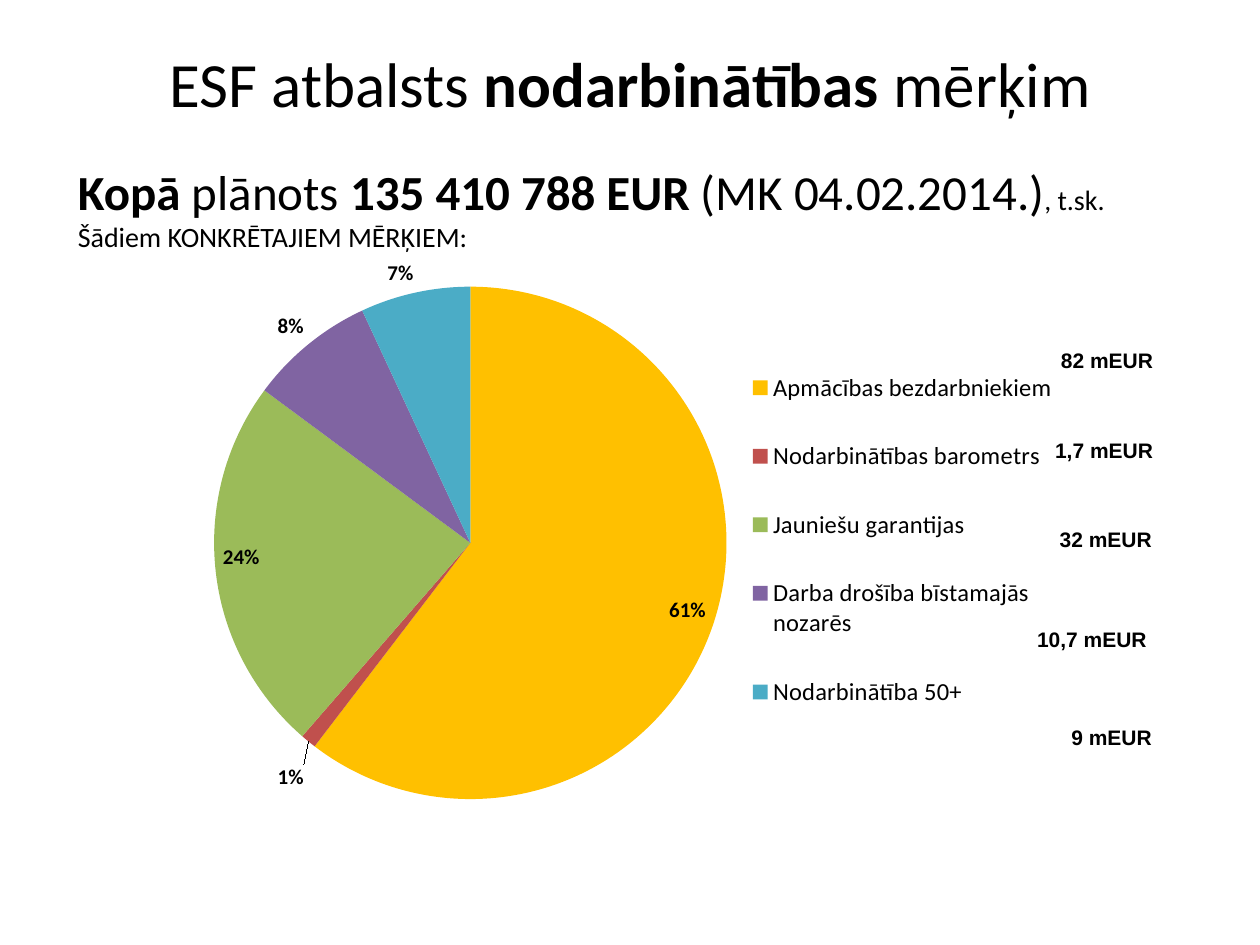
from lxml.etree import SubElement
from pptx import Presentation
from pptx.chart.data import CategoryChartData
from pptx.dml.color import RGBColor
from pptx.enum.chart import XL_CHART_TYPE, XL_LABEL_POSITION, XL_LEGEND_POSITION
from pptx.enum.text import MSO_ANCHOR, PP_ALIGN
from pptx.oxml.ns import qn
from pptx.util import Inches, Pt

LABEL_FORMAT = '0"%"'

# Category, share in percent, slice colour, label outside the pie
GOALS = [
    ("Apmācības bezdarbniekiem", 61, "FFC000", False),
    ("Nodarbinātības barometrs", 1, "C0504D", True),
    ("Jauniešu garantijas", 24, "9BBB59", False),
    ("Darba drošība bīstamajās nozarēs", 8, "8064A2", True),
    ("Nodarbinātība 50+", 7, "4BACC6", True),
]

# Amount, left, top
AMOUNTS = [
    ("82 mEUR", 7.68, 2.71),
    ("1,7 mEUR", 7.68, 3.42),
    ("32 mEUR", 7.67, 4.13),
    ("10,7 mEUR", 7.63, 4.92),
    ("9 mEUR", 7.67, 5.7),
]


def rgb(color):
    return RGBColor.from_string(color)


def manual_layout(x, y, w=None, h=None, inner=False, edge=True):
    """Return (tag, value) pairs of a manual chart layout."""
    items = [("layoutTarget", "inner")] if inner else []
    if edge:
        items += [("xMode", "edge"), ("yMode", "edge")]
    items += [("x", x), ("y", y)]
    if w is not None:
        items += [("w", w), ("h", h)]
    return items


def set_layout(parent, index, items):
    for old in parent.findall(qn("c:layout")):
        parent.remove(old)
    layout = SubElement(parent, qn("c:layout"))
    manual = SubElement(layout, qn("c:manualLayout"))
    for tag, value in items:
        SubElement(manual, qn(f"c:{tag}")).set("val", str(value))
    parent.insert(index, layout)


class SlideBuilder:
    text_color = "000000"
    body_font = "Calibri"
    amount_font = "Arial"

    def __init__(self, slide):
        self.slide = slide

    def style(self, font, size, bold=False, name=None):
        font.name = name or self.body_font
        font.size = Pt(size)
        font.bold = bold
        font.color.rgb = rgb(self.text_color)

    def text(self, x, y, w, h, runs, align=PP_ALIGN.LEFT, name=None):
        """Add a text box; runs are (text, size, bold)."""
        sp = self.slide.shapes.add_textbox(Inches(x), Inches(y), Inches(w), Inches(h))
        tf = sp.text_frame
        tf.word_wrap = True
        tf.vertical_anchor = MSO_ANCHOR.TOP
        p = tf.paragraphs[0]
        p.alignment = align
        for text, size, bold in runs:
            r = p.add_run()
            r.text = text
            self.style(r.font, size, bold, name)

    def pie(self, x, y, w, h, goals):
        data = CategoryChartData()
        data.categories = [goal[0] for goal in goals]
        data.add_series("Series 1", [goal[1] for goal in goals])
        chart = self.slide.shapes.add_chart(
            XL_CHART_TYPE.PIE, Inches(x), Inches(y), Inches(w), Inches(h), data
        ).chart
        chart.has_title = False
        self.style(chart.font, 10)
        plot = chart.plots[0]
        plot.vary_by_categories = True
        set_layout(chart._chartSpace.chart.plotArea, 0,
                   manual_layout(0.02, 0.09, 0.59, 0.86, inner=True))

        # Legend
        chart.has_legend = True
        legend = chart.legend
        legend.position = XL_LEGEND_POSITION.RIGHT
        legend.include_in_layout = False
        self.style(legend.font, 14)
        set_layout(legend._element, 1, manual_layout(0.63, 0.17, 0.36, 0.69))

        # Slices and their labels
        series = plot.series[0]
        labels = series.data_labels
        labels.show_value = True
        labels.number_format = LABEL_FORMAT
        labels.number_format_is_linked = False
        labels.position = XL_LABEL_POSITION.INSIDE_END
        self.style(labels.font, 12, True)
        for i, (_, share, color, outside) in enumerate(goals):
            point = series.points[i]
            point.format.fill.solid()
            point.format.fill.fore_color.rgb = rgb(color)
            if outside:
                label = point.data_label
                self.style(label.font, 12, True)
                label.position = XL_LABEL_POSITION.OUTSIDE_END
                self.finish_label(labels._element, i, share)

    def finish_label(self, labels, i, share):
        """Format one label, and move that of the thinnest slice away."""
        for label in labels.findall(qn("c:dLbl")):
            if label.find(qn("c:idx")).get("val") == str(i):
                number = SubElement(label, qn("c:numFmt"))
                number.set("formatCode", LABEL_FORMAT)
                number.set("sourceLinked", "0")
                label.insert(1, number)
                if share == 1:
                    set_layout(label, 1, manual_layout(0, 0.03, edge=False))


def main():
    prs = Presentation()
    prs.slide_width, prs.slide_height = Inches(10), Inches(7.5)
    s = SlideBuilder(prs.slides.add_slide(prs.slide_layouts[6]))

    # Title
    s.text(0.5, 0.3, 9, 1.09, [
        ("ESF atbalsts ", 36, False),
        ("nodarbinātības", 36, True),
        (" mērķim", 36, False),
    ], PP_ALIGN.CENTER)

    # Total planned
    s.text(0.52, 1.23, 9, 5.35, [
        ("Kopā", 28, True),
        (" plānots ", 28, False),
        ("135 410 788 EUR ", 28, True),
        ("(MK 04.02.2014.)", 28, False),
        (", t.sk. Šādiem KONKRĒTAJIEM MĒRĶIEM:", 16, False),
    ])

    # Shares by goal
    s.pie(1.55, 1.85, 6.93, 4.73, GOALS)

    # Amounts beside the legend
    for amount, x, y in AMOUNTS:
        s.text(x, y, 1.57, 0.3, [(amount, 12, True)], PP_ALIGN.RIGHT, s.amount_font)

    prs.save("out.pptx")


if __name__ == "__main__":
    main()
